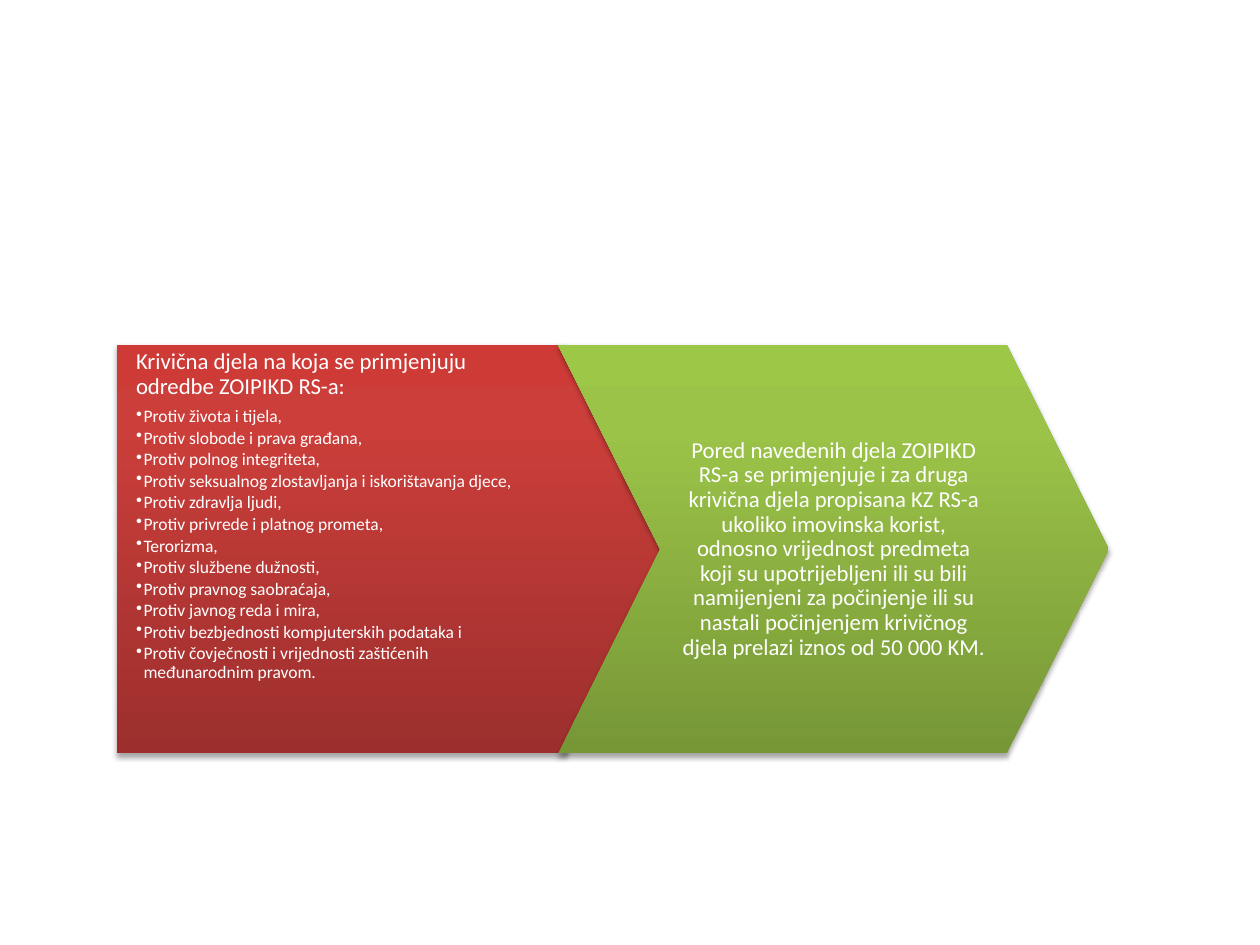
from copy import deepcopy

from lxml.etree import SubElement
from pptx import Presentation
from pptx.dml.color import RGBColor
from pptx.enum.shapes import MSO_SHAPE
from pptx.enum.text import MSO_ANCHOR, PP_ALIGN
from pptx.oxml.ns import qn
from pptx.util import Inches, Pt

ARROW_TOP, ARROW_WIDTH, ARROW_HEIGHT = 2.74, 4.37, 3.24
STOP_POSITIONS = (0, 0.8, 1)
RED = ("9C2F2D", "CB3E3A", "CE3B37")
GREEN = ("779737", "9BC348", "9DC746")
HEADING = {"size": 13, "after": 0.35}
BULLET = {"size": 10, "after": 0.15}

OFFENCES_TITLE = "Krivična djela na koja se primjenjuju odredbe ZOIPIKD RS-a:"
OFFENCES = [
    "Protiv života i tijela,",
    "Protiv slobode i prava građana,",
    "Protiv polnog integriteta,",
    "Protiv seksualnog zlostavljanja i iskorištavanja djece,",
    "Protiv zdravlja ljudi,",
    "Protiv privrede i platnog prometa,",
    "Terorizma,",
    "Protiv službene dužnosti,",
    "Protiv pravnog saobraćaja,",
    "Protiv javnog reda i mira,",
    "Protiv bezbjednosti kompjuterskih podataka i",
    "Protiv čovječnosti i vrijednosti zaštićenih međunarodnim pravom.",
]
OTHER_OFFENCES = (
    "Pored navedenih djela ZOIPIKD RS-a se primjenjuje i za druga krivična djela "
    "propisana KZ RS-a ukoliko imovinska korist, odnosno vrijednost predmeta koji su "
    "upotrijebljeni ili su bili namijenjeni za počinjenje ili su nastali počinjenjem "
    "krivičnog djela prelazi iznos od 50 000 KM."
)


def color(hex_value):
    return RGBColor.from_string(hex_value)


def set_gradient(shape, colors):
    """Fill from bottom to top with three colour stops."""
    shape.fill.gradient()
    shape.fill.gradient_angle = 90
    stop_list = shape._element.spPr.find(qn("a:gradFill")).find(qn("a:gsLst"))
    stop_list.append(deepcopy(stop_list[-1]))
    for stop, position, hex_value in zip(shape.fill.gradient_stops, STOP_POSITIONS, colors):
        stop.position = position
        stop.color.rgb = color(hex_value)


def add_shadow(shape):
    shape.shadow.inherit = False
    effects = shape._element.spPr.find(qn("a:effectLst"))
    shadow = SubElement(effects, qn("a:outerShdw"), blurRad=str(Pt(3.1)),
                        dist=str(Pt(1.8)), dir="5400000", rotWithShape="0")
    black = SubElement(shadow, qn("a:srgbClr"), val="000000")
    SubElement(black, qn("a:alpha"), val="35000")


def add_arrow(slide, kind, left, colors):
    shape = slide.shapes.add_shape(kind, Inches(left), Inches(ARROW_TOP),
                                   Inches(ARROW_WIDTH), Inches(ARROW_HEIGHT))
    shape.adjustments[0] = 0.25
    shape.line.fill.background()
    set_gradient(shape, colors)
    add_shadow(shape)


def add_text_frame(slide, left, width, right_inset, anchor):
    box = slide.shapes.add_textbox(Inches(left), Inches(ARROW_TOP),
                                   Inches(width), Inches(ARROW_HEIGHT))
    frame = box.text_frame
    settings = {"word_wrap": True, "vertical_anchor": anchor,
                "margin_left": Inches(0.15), "margin_right": Inches(right_inset),
                "margin_top": Inches(0.04), "margin_bottom": Inches(0.04)}
    for name, value in settings.items():
        setattr(frame, name, value)
    return frame


def write_paragraph(paragraph, text, style, alignment=PP_ALIGN.LEFT):
    """Space after is a share of the text size."""
    settings = {"alignment": alignment, "line_spacing": 0.9,
                "space_after": Pt(style["size"] * style["after"])}
    for name, value in settings.items():
        setattr(paragraph, name, value)
    run = paragraph.add_run()
    run.text = text
    run.font.name = "Calibri"
    run.font.size = Pt(style["size"])
    run.font.color.rgb = color("FFFFFF")


def add_bullet(frame, text):
    paragraph = frame.add_paragraph()
    write_paragraph(paragraph, text, BULLET)
    paragraph.level = 1
    properties = paragraph._p.get_or_add_pPr()
    properties.set("marL", str(Inches(0.06)))
    properties.set("indent", str(Inches(-0.06)))
    SubElement(properties, qn("a:buChar"), char="•")


def main():
    presentation = Presentation()
    presentation.slide_width, presentation.slide_height = Inches(10), Inches(7.5)
    slide = presentation.slides.add_slide(presentation.slide_layouts[6])

    add_arrow(slide, MSO_SHAPE.PENTAGON, 0.93, RED)
    offences = add_text_frame(slide, 0.93, 3.96, 0.62, MSO_ANCHOR.TOP)
    write_paragraph(offences.paragraphs[0], OFFENCES_TITLE, HEADING)
    for offence in OFFENCES:
        add_bullet(offences, offence)

    add_arrow(slide, MSO_SHAPE.CHEVRON, 4.43, GREEN)
    others = add_text_frame(slide, 5.24, 2.75, 0.15, MSO_ANCHOR.MIDDLE)
    write_paragraph(others.paragraphs[0], OTHER_OFFENCES, HEADING, PP_ALIGN.CENTER)

    presentation.save("out.pptx")


if __name__ == "__main__":
    main()
